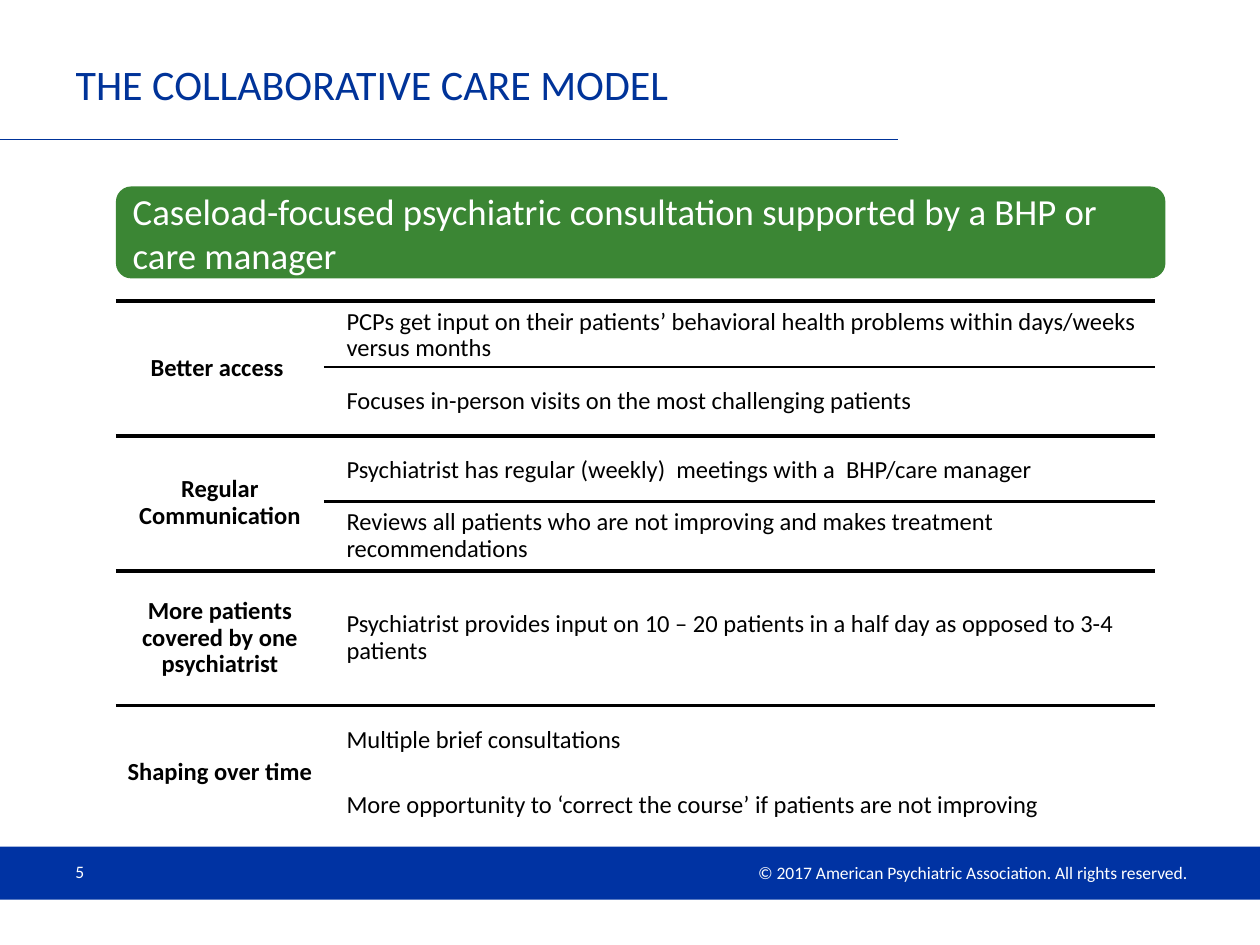
from dataclasses import dataclass

from lxml import etree
from pptx import Presentation
from pptx.dml.color import RGBColor
from pptx.enum.shapes import MSO_CONNECTOR, MSO_SHAPE
from pptx.enum.text import MSO_ANCHOR, PP_ALIGN
from pptx.oxml.ns import qn
from pptx.util import Inches, Pt

STRAIGHT = MSO_CONNECTOR.STRAIGHT
RECTANGLE, ROUNDED = MSO_SHAPE.RECTANGLE, MSO_SHAPE.ROUNDED_RECTANGLE
MIDDLE = MSO_ANCHOR.MIDDLE
LEFT, CENTER, RIGHT = PP_ALIGN.LEFT, PP_ALIGN.CENTER, PP_ALIGN.RIGHT

TITLE = "THE COLLABORATIVE CARE MODEL"
BANNER = "Caseload-focused psychiatric consultation supported by a BHP or care manager"
COPYRIGHT = "© 2017 American Psychiatric Association. All rights reserved."
PAGE_NUMBER = "5"
BENEFITS = [
    ("Better access ", [
        "PCPs get input on their patients’ behavioral health problems within days/weeks versus months",
        "Focuses in-person visits on the most challenging patients",
    ]),
    ("Regular Communication", [
        "Psychiatrist has regular (weekly)  meetings with a  BHP/care manager",
        "Reviews all patients who are not improving and makes treatment recommendations",
    ]),
    ("More patients covered by one psychiatrist", [
        "Psychiatrist provides input on 10 – 20 patients in a half day as opposed to 3-4 patients",
    ]),
    ("Shaping over time", [
        "Multiple brief consultations",
        "More opportunity to ‘correct the course’ if patients are not improving",
    ]),
]


@dataclass(frozen=True)
class Theme:
    font: str = "Calibri"
    heading: str = "003399"
    footer: str = "0033A3"
    banner: str = "3B8634"
    ink: str = "000000"
    light: str = "FFFFFF"
    title_size: int = 24
    banner_size: int = 21
    body_size: int = 14
    footer_size: int = 10


THEME = Theme()
GRID_LEFT, GRID_RIGHT, GRID_TOP = 0.92, 9.17, 2.39
ROW_HEIGHT, LABEL_WIDTH, DETAIL_LEFT = 1.07, 1.65, 2.69
ROW_GAP, CELL_INSET = 0.05, 0.06


def write(shape, text, size, color, align=LEFT, bold=False, spacing=None, inset=None):
    frame = shape.text_frame
    frame.text = text
    frame.word_wrap = True
    frame.vertical_anchor = MIDDLE
    if inset is not None:
        frame.margin_left = frame.margin_right = Inches(inset)
        frame.margin_top = frame.margin_bottom = Inches(inset)
    para = frame.paragraphs[0]
    para.alignment = align
    para.line_spacing = spacing
    font = para.runs[0].font
    font.name, font.size, font.bold = THEME.font, Pt(size), bold
    font.color.rgb = RGBColor.from_string(color)


def add_text(page, place, *args, **style):
    write(page.shapes.add_textbox(*map(Inches, place)), *args, **style)


def add_block(page, kind, place, color):
    block = page.shapes.add_shape(kind, *map(Inches, place))
    block.shadow.inherit = False
    block.fill.solid()
    block.fill.fore_color.rgb = RGBColor.from_string(color)
    block.line.fill.background()
    return block


def add_rule(page, left, right, top, color, weight):
    rule = page.shapes.add_connector(STRAIGHT, *map(Inches, (left, top, right, top)))
    rule.line.color.rgb = RGBColor.from_string(color)
    rule.line.width = Pt(weight)
    etree.SubElement(rule._element.spPr, qn("a:effectLst"))


def add_benefit(page, top, label, details, last):
    cell = dict(spacing=0.9, inset=CELL_INSET)
    add_rule(page, GRID_LEFT, GRID_RIGHT, top, THEME.ink, 2)
    add_text(page, (GRID_LEFT, top, LABEL_WIDTH, ROW_HEIGHT), label,
             THEME.body_size, THEME.ink, align=CENTER, bold=True, **cell)
    count = len(details)
    gap = ROW_GAP / count
    height = (ROW_HEIGHT - gap * (count + 1)) / count
    for index, detail in enumerate(details):
        detail_top = top + gap + index * (height + gap)
        add_text(page, (DETAIL_LEFT, detail_top, GRID_RIGHT - DETAIL_LEFT, height),
                 detail, THEME.body_size, THEME.ink, **cell)
        if index < count - 1 and not last:
            add_rule(page, GRID_LEFT + LABEL_WIDTH, GRID_RIGHT,
                     detail_top + height, THEME.ink, 1.5)


def main():
    deck = Presentation()
    deck.slide_width, deck.slide_height = Inches(10), Inches(7.5)
    page = deck.slides.add_slide(deck.slide_layouts[5])

    title = page.shapes.title
    title.left, title.top, title.width, title.height = map(Inches, (0.5, 0.34, 6.63, 0.64))
    write(title, TITLE, THEME.title_size, THEME.heading)
    add_rule(page, 0, 7.13, 1.11, THEME.heading, 0.75)

    add_block(page, RECTANGLE, (0, 6.72, 10, 0.42), THEME.footer)
    add_text(page, (5.15, 6.79, 4.37, 0.27), COPYRIGHT,
             THEME.footer_size, THEME.light, align=RIGHT)
    add_text(page, (0.5, 6.72, 2.33, 0.4), PAGE_NUMBER, THEME.footer_size, THEME.light)

    for index, (label, details) in enumerate(BENEFITS):
        add_benefit(page, GRID_TOP + index * ROW_HEIGHT, label, details,
                    index == len(BENEFITS) - 1)

    banner = add_block(page, ROUNDED, (GRID_LEFT, 1.48, 8.33, 0.73), THEME.banner)
    write(banner, BANNER, THEME.banner_size, THEME.light)
    deck.save("out.pptx")


if __name__ == "__main__":
    main()
